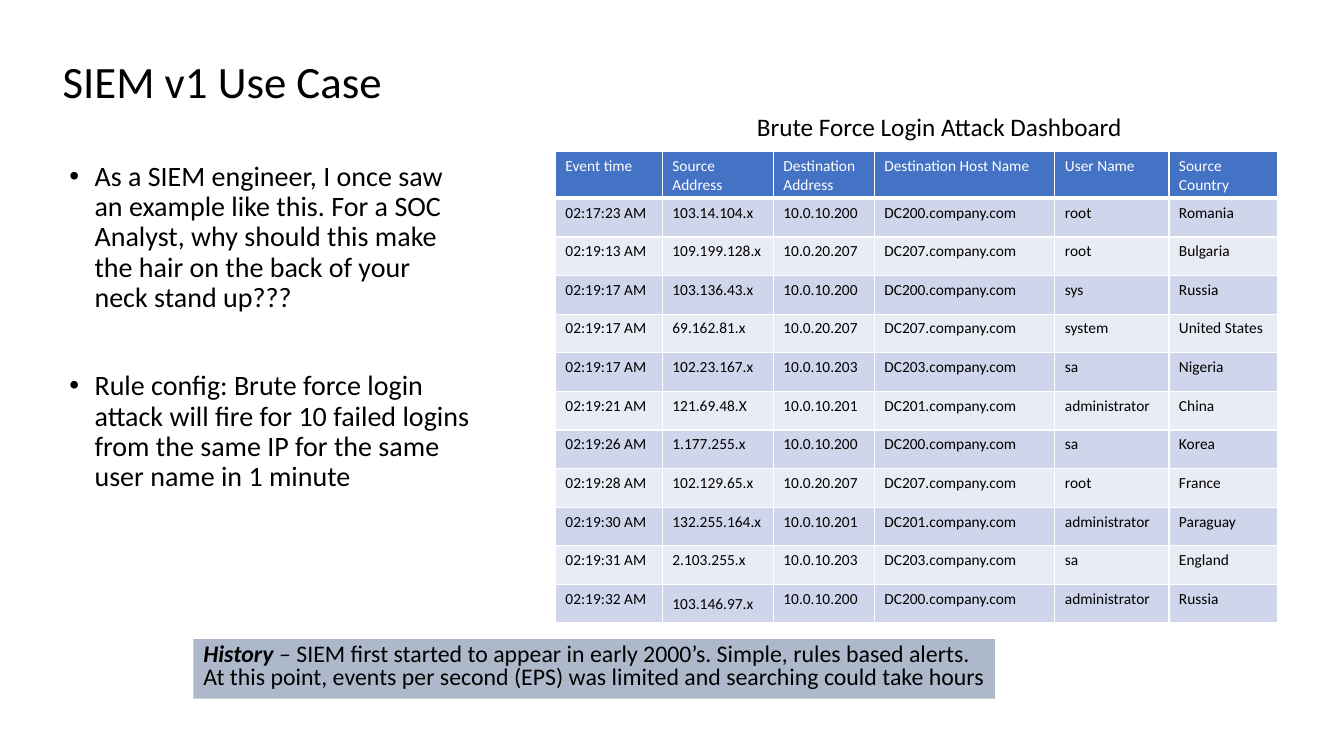
from lxml import etree
from pptx import Presentation
from pptx.dml.color import RGBColor
from pptx.enum.shapes import MSO_SHAPE
from pptx.enum.text import MSO_ANCHOR, MSO_AUTO_SIZE, PP_ALIGN
from pptx.oxml.ns import qn
from pptx.util import Pt

RECTANGLE = MSO_SHAPE.RECTANGLE
TOP, MIDDLE = MSO_ANCHOR.TOP, MSO_ANCHOR.MIDDLE
NO_FIT = MSO_AUTO_SIZE.NONE
LEFT = PP_ALIGN.LEFT

FONT = "Calibri"
COLORS = {
    "text": "000000",
    "white": "FFFFFF",
    "header": "4472C4",
    "odd": "CFD5EA",
    "even": "E9EBF5",
    "history": "ADB9CA",
}
COLUMN_WIDTHS = [76.4, 79.3, 72.1, 129, 81.5, 77.9]
HEADINGS = ["Event time", "Source Address", "Destination Address",
            "Destination Host Name", "User Name", "Source Country"]
LOGINS = [
    ("02:17:23", "103.14.104.x", 10, 200, "root", "Romania"),
    ("02:19:13", "109.199.128.x", 20, 207, "root", "Bulgaria"),
    ("02:19:17", "103.136.43.x", 10, 200, "sys", "Russia"),
    ("02:19:17", "69.162.81.x", 20, 207, "system", "United States"),
    ("02:19:17", "102.23.167.x", 10, 203, "sa", "Nigeria"),
    ("02:19:21", "121.69.48.X", 10, 201, "administrator", "China"),
    ("02:19:26", "1.177.255.x", 10, 200, "sa", "Korea"),
    ("02:19:28", "102.129.65.x", 20, 207, "root", "France"),
    ("02:19:30", "132.255.164.x", 10, 201, "administrator", "Paraguay"),
    ("02:19:31", "2.103.255.x", 10, 203, "sa", "England"),
    ("02:19:32", "103.146.97.x", 10, 200, "administrator", "Russia"),
]
BULLETS = [
    ("As a SIEM engineer, I once saw an example like this. For a SOC Analyst, "
     "why should this make the hair on the back of your neck stand up???", 10),
    ("Rule config: Brute force login attack will fire for 10 failed logins "
     "from the same IP for the same user name in 1 minute", 41.6),
]


class SlideBuilder:
    """Draws styled elements on one slide, with lengths in points."""

    def __init__(self, slide):
        self.slide = slide

    def add_span(self, para, text, size, color="text", strong=False):
        span = para.add_run()
        span.text = text
        span.font.name = FONT
        span.font.size = Pt(size)
        span.font.bold = span.font.italic = strong
        span.font.color.rgb = RGBColor.from_string(COLORS[color])

    def set_spacing(self, para, line, before=0):
        para.alignment = LEFT
        para.line_spacing = line
        para.space_before = Pt(before)

    def add_title(self, text, left, top, width, height):
        title = self.slide.shapes.title
        title.left, title.top = Pt(left), Pt(top)
        title.width, title.height = Pt(width), Pt(height)
        frame = title.text_frame
        frame.auto_size = NO_FIT
        frame.vertical_anchor = MIDDLE
        para = frame.paragraphs[0]
        self.set_spacing(para, 0.9)
        self.add_span(para, text, 32)

    def add_text_box(self, left, top, width, height):
        box = self.slide.shapes.add_textbox(Pt(left), Pt(top), Pt(width), Pt(height))
        box.text_frame.word_wrap = True
        return box.text_frame

    def add_label(self, text, size, *place):
        self.add_span(self.add_text_box(*place).paragraphs[0], text, size)

    def add_bullets(self, items, size, *place):
        frame = self.add_text_box(*place)
        for index, (text, before) in enumerate(items):
            para = frame.add_paragraph() if index else frame.paragraphs[0]
            self.set_spacing(para, 0.9, before)
            properties = para._p.get_or_add_pPr()
            properties.set("marL", str(Pt(18)))
            properties.set("indent", str(-Pt(18)))
            etree.SubElement(properties, qn("a:buFont"), typeface="Arial")
            etree.SubElement(properties, qn("a:buChar"), char="•")
            self.add_span(para, text, size)

    def add_banner(self, lead, text, size, left, top, width, height):
        banner = self.slide.shapes.add_shape(
            RECTANGLE, Pt(left), Pt(top), Pt(width), Pt(height))
        banner.shadow.inherit = False
        banner.fill.solid()
        banner.fill.fore_color.rgb = RGBColor.from_string(COLORS["history"])
        banner.line.fill.background()
        frame = banner.text_frame
        frame.word_wrap = True
        frame.vertical_anchor = TOP
        frame.margin_right = Pt(5)
        para = frame.paragraphs[0]
        self.set_spacing(para, 0.8, 10)
        self.add_span(para, lead, size, strong=True)
        self.add_span(para, text, size)

    def set_borders(self, cell, top_width, bottom_width):
        properties = cell._tc.get_or_add_tcPr()
        widths = {"lnL": 1, "lnR": 1, "lnT": top_width, "lnB": bottom_width}
        for side, width in widths.items():
            line = etree.SubElement(properties, qn(f"a:{side}"), w=str(Pt(width)))
            fill = etree.SubElement(line, qn("a:solidFill"))
            etree.SubElement(fill, qn("a:srgbClr"), val=COLORS["white"])

    def add_table(self, rows, widths, header_height, row_height, left, top):
        height = header_height + row_height * (len(rows) - 1)
        table = self.slide.shapes.add_table(
            len(rows), len(widths), Pt(left), Pt(top),
            Pt(sum(widths)), Pt(height)).table
        for column, width in zip(table.columns, widths):
            column.width = Pt(width)
        for index, values in enumerate(rows):
            table.rows[index].height = Pt(row_height if index else header_height)
            band = ("odd" if index % 2 else "even") if index else "header"
            for column, value in enumerate(values):
                cell = table.cell(index, column)
                self.set_borders(cell, 3 if index == 1 else 1, 1 if index else 3)
                cell.fill.solid()
                cell.fill.fore_color.rgb = RGBColor.from_string(COLORS[band])
                self.add_span(cell.text_frame.paragraphs[0], value, 11,
                              "text" if index else "white")
        return table


def main():
    deck = Presentation()
    deck.slide_width, deck.slide_height = Pt(960), Pt(540)
    page = SlideBuilder(deck.slides.add_slide(deck.slide_layouts[5]))
    page.add_title("SIEM v1 Use Case", 37.5, 8, 828, 104.4)
    page.add_bullets(BULLETS, 20, 42.5, 112.3, 300.2, 311.8)
    rows = [HEADINGS] + [
        [f"{time} AM", source, f"10.0.{subnet}.{host}",
         f"DC{host}.company.com", user, country]
        for time, source, subnet, host, user, country in LOGINS
    ]
    table = page.add_table(rows, COLUMN_WIDTHS, 31.7, 27.6, 396.7, 108)
    table.cell(len(LOGINS), 1).vertical_anchor = MIDDLE
    page.add_label("Brute Force Login Attack Dashboard", 18, 533.5, 75.6, 330.5, 29)
    page.add_banner(
        "History",
        " – SIEM first started to appear in early 2000’s. Simple, rules based "
        "alerts. At this point, events per second (EPS) was limited and "
        "searching could take hours",
        17, 138.2, 456.5, 572.4, 42.5)
    deck.save("out.pptx")


if __name__ == "__main__":
    main()
